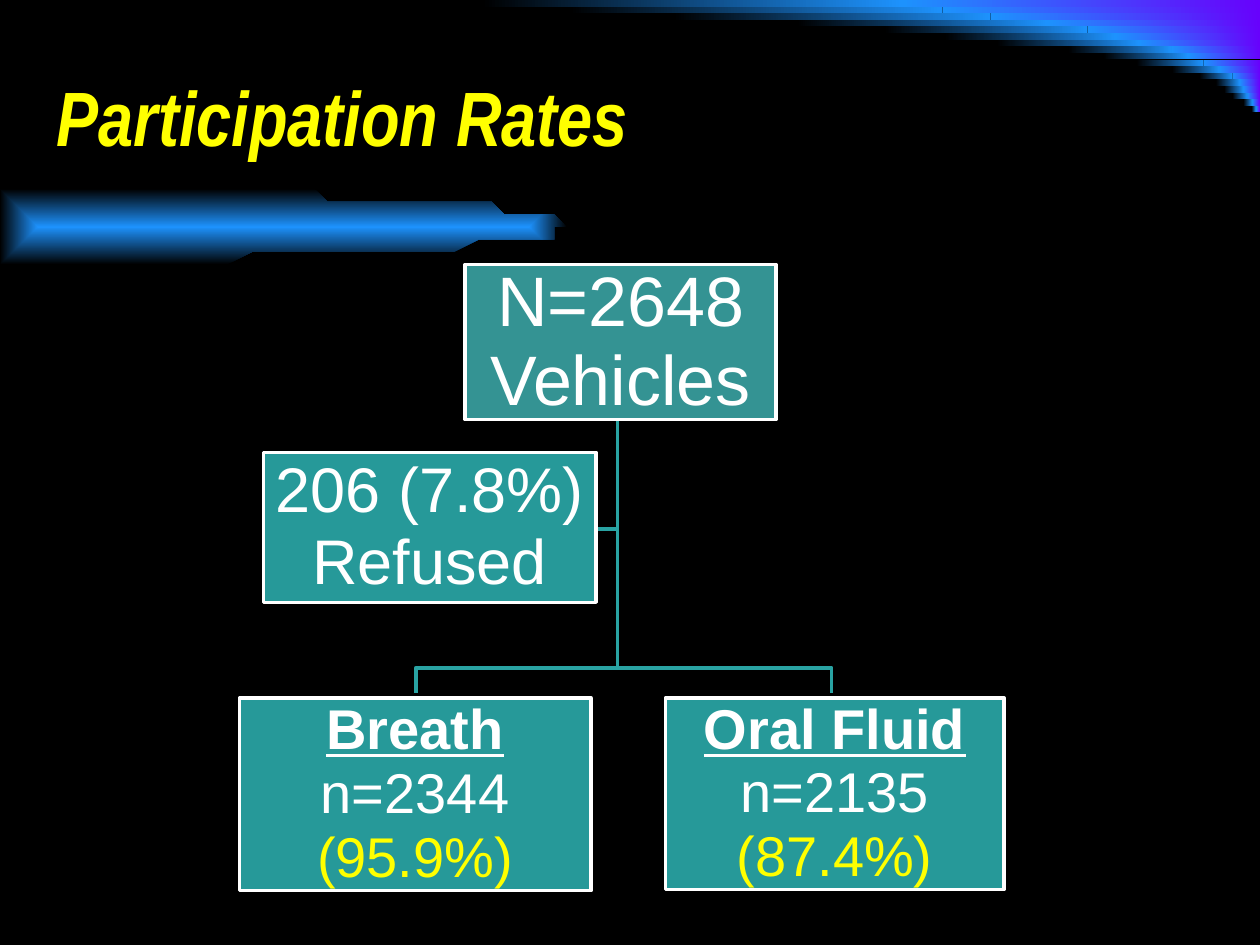
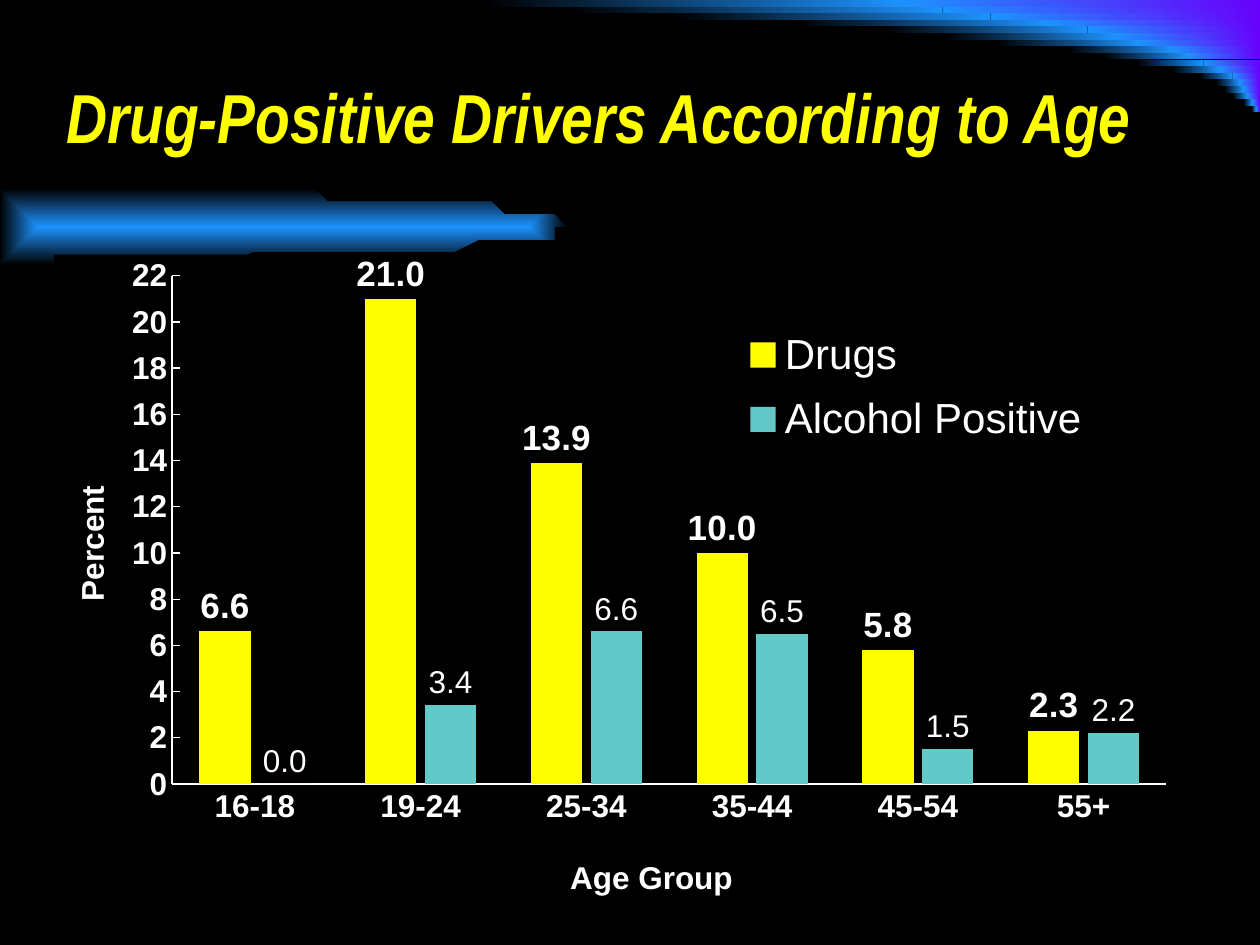
"""Build two slides on survey participation and drug-positive drivers by age."""
from dataclasses import dataclass
from math import cos, pi, sin

from lxml import etree
from pptx import Presentation
from pptx.chart.data import CategoryChartData
from pptx.dml.color import RGBColor
from pptx.enum.chart import XL_CHART_TYPE, XL_LABEL_POSITION, XL_LEGEND_POSITION, XL_TICK_MARK
from pptx.enum.shapes import MSO_SHAPE
from pptx.enum.text import MSO_ANCHOR, PP_ALIGN
from pptx.oxml import parse_xml
from pptx.oxml.ns import nsdecls, qn
from pptx.util import Inches, Pt

RECT = MSO_SHAPE.RECTANGLE
MIDDLE = MSO_ANCHOR.MIDDLE
LEFT, CENTER = PP_ALIGN.LEFT, PP_ALIGN.CENTER
COLUMNS = XL_CHART_TYPE.COLUMN_CLUSTERED
OUTSIDE = XL_LABEL_POSITION.OUTSIDE_END
RIGHT = XL_LEGEND_POSITION.RIGHT
NONE, INSIDE = XL_TICK_MARK.NONE, XL_TICK_MARK.INSIDE


@dataclass(frozen=True)
class Theme:
    black: RGBColor = RGBColor.from_string("000000")
    white: RGBColor = RGBColor.from_string("FFFFFF")
    yellow: RGBColor = RGBColor.from_string("FFFF00")
    blue: RGBColor = RGBColor.from_string("1D92FD")
    violet: RGBColor = RGBColor.from_string("6702FC")
    root: RGBColor = RGBColor.from_string("349393")
    leaf: RGBColor = RGBColor.from_string("269999")
    link: RGBColor = RGBColor.from_string("29A3A3")
    aqua: RGBColor = RGBColor.from_string("63C8C8")
    face: str = "Arial"
    head: str = "Arial Narrow"
    axis: int = 18
    label: int = 20
    legend: int = 24
    small: int = 32
    mid: int = 36
    large: int = 40


T = Theme()
deck = Presentation()
deck.slide_width, deck.slide_height = Inches(10), Inches(7.5)
COL, ROW = deck.slide_width // 100, deck.slide_height // 75


def cell(x, y, w, h):
    return [round(x * COL), round(y * ROW), round(w * COL), round(h * ROW)]


def write(shape, paras, size, face=T.face, color=T.white, bold=False, italic=False,
          align=LEFT, space=None, inset=None):
    frame = shape.text_frame
    frame.word_wrap = True
    frame.vertical_anchor = MIDDLE
    if inset is not None:
        frame.margin_left = frame.margin_right = inset
        frame.margin_top = frame.margin_bottom = inset
    for i, runs in enumerate(paras):
        para = frame.add_paragraph() if i else frame.paragraphs[0]
        para.alignment = align
        para.line_spacing = space
        for text, extra in runs:
            if text == "\n":
                para.add_line_break()
                continue
            run = para.add_run()
            run.text = text
            font = run.font
            font.name, font.size = face, Pt(size)
            font.bold, font.italic = extra.get("bold", bold), italic
            font.underline = extra.get("under", False)
            font.color.rgb = extra.get("color", color)


back = deck.slide_master.background.fill
back.solid()
back.fore_color.rgb = T.black

SPANS = [28.4, 25.2, 21.4, 16.9, 13.7, 11.5, 9.6, 7, 5.7, 4.5, 3.2, 2.2, 1.6, 1.3, 1, 0.6, 0.3]
STEP, RATIO = 0.525, 1.174
BOW = [(45 * sin(pi * i / 60), 17.9 - 2.9 * cos(pi * i / 60)) for i in range(61)]
TITLES = [
    ("Participation Rates", 3.5, 85, 44),
    ("Drug-Positive Drivers According to Age", 4.3, 90.6, 39.6),
]

pages = []
for name, x, w, size in TITLES:
    page = deck.slides.add_slide(deck.slide_layouts[6])
    pages.append(page)
    for i, span in enumerate(SPANS):
        for left, wide, pair in [
            (100 - span, span, (T.blue, T.violet)),
            (100 - span * (1 + RATIO), span * RATIO, (T.black, T.blue)),
        ]:
            band = page.shapes.add_shape(RECT, *cell(left, i * STEP, wide, STEP))
            band.shadow.inherit = False
            band.line.fill.background()
            band.fill.gradient()
            band.fill.gradient_angle = 0
            for stop, color in zip(band.fill.gradient_stops, pair):
                stop.color.rgb = color

    pen = page.shapes.build_freeform(*BOW[0], scale=COL)
    pen.add_line_segments(BOW[1:], close=True)
    bow = pen.convert_to_shape()
    bow.shadow.inherit = False
    bow.line.fill.background()
    bow.fill.gradient()
    for stop, color in zip(bow.fill.gradient_stops, (T.blue, T.black)):
        stop.color.rgb = color
    lin = next(bow.element.iter(qn("a:lin")))
    glow = etree.Element(qn("a:path"), path="shape")
    etree.SubElement(glow, qn("a:fillToRect"), l="50000", t="50000", r="50000", b="50000")
    lin.getparent().replace(lin, glow)

    title = page.shapes.add_textbox(*cell(x, 2.9, w, 12.5))
    write(title, [[(name, {})]], size, face=T.head, color=T.yellow, bold=True, italic=True)

flow, ages = pages

TOP, FORK, BASE, MID = 33.4, 52.8, 55.4, 49.2
LINKS = [
    [(MID, TOP), (MID, 41.9), (47.3, 41.9)],
    [(MID, TOP), (MID, FORK), (66.2, FORK), (66.2, BASE)],
    [(MID, TOP), (MID, FORK), (33, FORK), (33, BASE)],
]
for route in LINKS:
    pen = flow.shapes.build_freeform(*route[0], scale=COL)
    pen.add_line_segments(route[1:], close=False)
    link = pen.convert_to_shape()
    link.shadow.inherit = False
    link.fill.background()
    link.line.color.rgb = T.link
    link.line.width = Pt(2)

HEAD = {"bold": True, "under": True}
RATE = {"color": T.yellow}
BREAK = ("\n", {})
BOXES = [
    ((36.9, 21, 24.7, 12.3), T.root, T.large, [[("N=2648", {}), BREAK, ("Vehicles", {})]]),
    ((19, BASE, 27.9, 15.3), T.leaf, T.small,
     [[("Breath", HEAD)], [("n=2344 ", {}), ("(95.9%)", RATE)]]),
    ((52.8, BASE, 26.9, 15.2), T.leaf, T.small,
     [[("Oral Fluid", HEAD), BREAK, ("n=2135", {}), BREAK, ("(87.4%)", RATE)]]),
    ((20.9, 35.9, 26.4, 11.9), T.leaf, T.mid, [[("206 (7.8%) Refused", {})]]),
]
for area, color, size, paras in BOXES:
    box = flow.shapes.add_shape(RECT, *cell(*area))
    box.shadow.inherit = False
    box.fill.solid()
    box.fill.fore_color.rgb = color
    box.line.color.rgb = T.white
    box.line.width = Pt(2)
    write(box, paras, size, align=CENTER, space=0.95, inset=Inches(0.03))

data = CategoryChartData(number_format="General")
data.categories = ["16-18", "19-24", "25-34", "35-44", "45-54", "55+"]
data.add_series("Drugs", [6.6, 21, 13.9, 10, 5.8, 2.3])
data.add_series("Alcohol Positive", [0, 3.4, 6.6, 6.5, 1.5, 2.2])
chart = ages.shapes.add_chart(COLUMNS, *cell(4.3, 20.2, 90, 52.6), data).chart
chart.has_title = False
chart.font.name, chart.font.size = T.face, Pt(10)
chart.font.color.rgb = T.white
chart.element.xpath("c:txPr")[0].addprevious(parse_xml(
    f'<c:spPr {nsdecls("c", "a")}><a:solidFill><a:srgbClr val="{T.black}"/></a:solidFill>'
    '<a:ln><a:noFill/></a:ln></c:spPr>'))

plot = chart.plots[0]
plot.vary_by_categories = False
plot.gap_width, plot.overlap = 107, -17
for series, color, size, bold in zip(plot.series, (T.yellow, T.aqua), (T.label, T.axis), (True, False)):
    series.format.fill.solid()
    series.format.fill.fore_color.rgb = color
    tags = series.data_labels
    tags.show_value = True
    tags.position = OUTSIDE
    tags.number_format, tags.number_format_is_linked = "0.0", False
    tags.font.name, tags.font.size, tags.font.bold = T.face, Pt(size), bold
    tags.font.color.rgb = T.white

for axis, name, tick in [
    (chart.category_axis, "Age Group", NONE),
    (chart.value_axis, "Percent", INSIDE),
]:
    axis.has_major_gridlines = False
    axis.major_tick_mark, axis.minor_tick_mark = tick, NONE
    axis.format.line.color.rgb = T.white
    axis.format.line.width = Pt(0.75)
    axis.axis_title.text_frame.text = name
    for font in (axis.tick_labels.font, axis.axis_title.text_frame.paragraphs[0].runs[0].font):
        font.name, font.size, font.bold = T.face, Pt(T.axis), True
        font.color.rgb = T.white

scale = chart.value_axis
scale.minimum_scale, scale.maximum_scale, scale.major_unit = 0, 22, 2
turn = scale.axis_title.element.xpath(".//a:bodyPr")[0]
turn.set("rot", "-5400000")
turn.set("vert", "horz")

chart.has_legend = True
legend = chart.legend
legend.position = RIGHT
legend.include_in_layout = False
legend.font.name, legend.font.size = T.face, Pt(T.legend)
legend.font.color.rgb = T.white

PLACES = [
    (chart.element.xpath(".//c:plotArea")[0], 0, {"x": 0.104, "y": 0.032, "w": 0.877, "h": 0.767}),
    (chart.element.xpath(".//c:legend")[0], 1, {"x": 0.6, "y": 0.09, "w": 0.32, "h": 0.22}),
    (chart.category_axis.axis_title.element, 1, {"x": 0.45, "y": 0.9}),
    (scale.axis_title.element, 1, {"x": 0.01, "y": 0.34}),
]
for part, index, spot in PLACES:
    for old in part.findall(qn("c:layout")):
        part.remove(old)
    layout = etree.Element(qn("c:layout"))
    manual = etree.SubElement(layout, qn("c:manualLayout"))
    if index == 0:
        etree.SubElement(manual, qn("c:layoutTarget"), val="inner")
    for key in "xy":
        etree.SubElement(manual, qn(f"c:{key}Mode"), val="edge")
    for key, share in spot.items():
        etree.SubElement(manual, qn(f"c:{key}"), val=str(share))
    part.insert(index, layout)

deck.save("out.pptx")
